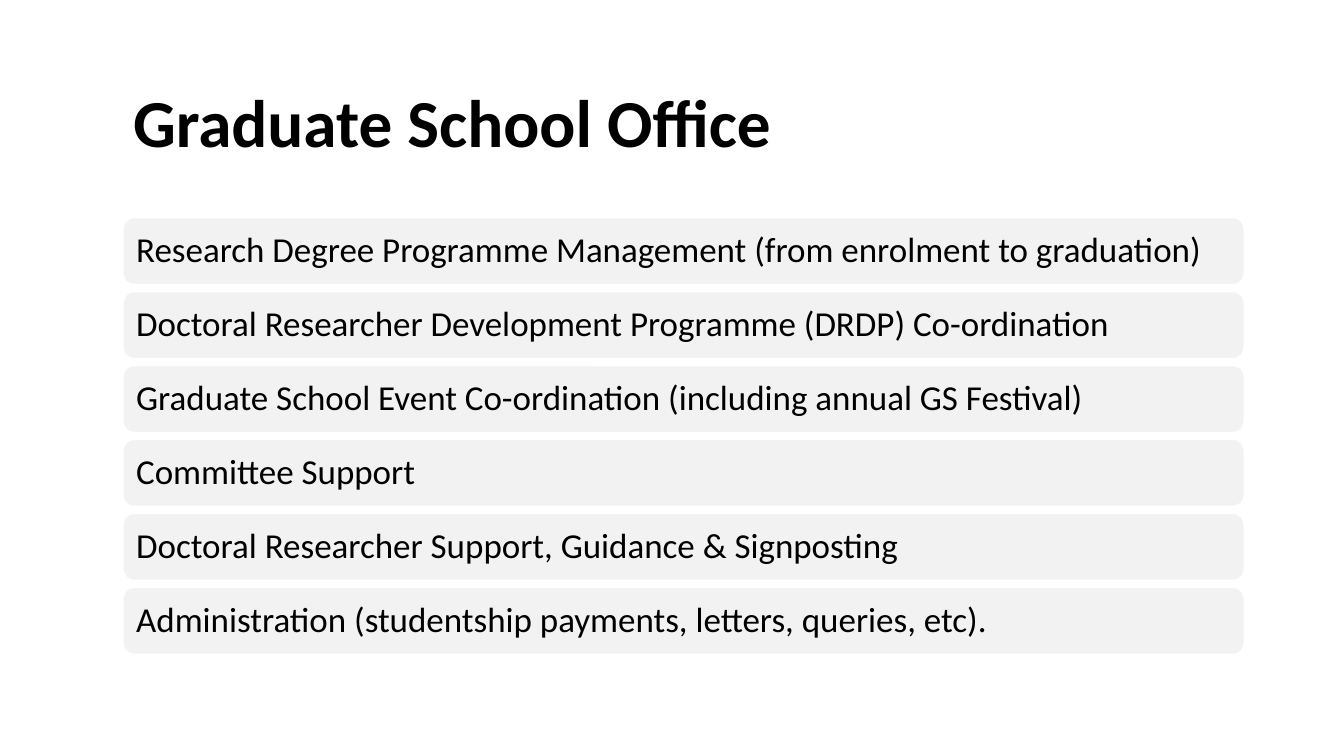
from pptx import Presentation
from pptx.dml.color import RGBColor
from pptx.enum.shapes import MSO_SHAPE
from pptx.enum.text import MSO_ANCHOR, PP_ALIGN
from pptx.util import Inches, Pt

DUTIES = [
    "Research Degree Programme Management (from enrolment to graduation)",
    "Doctoral Researcher Development Programme (DRDP) Co-ordination",
    "Graduate School Event Co-ordination (including annual GS Festival)",
    "Committee Support",
    "Doctoral Researcher Support, Guidance & Signposting",
    "Administration (studentship payments, letters, queries, etc).",
]


def color(hex_code):
    """Return the colour for a hex string."""
    return RGBColor.from_string(hex_code)


def write(frame, text, size, bold=False):
    """Write one left-aligned, vertically centred line of text."""
    frame.word_wrap = True
    frame.vertical_anchor = MSO_ANCHOR.MIDDLE
    line = frame.paragraphs[0]
    line.alignment = PP_ALIGN.LEFT
    line.line_spacing = 0.9
    run = line.add_run()
    run.text = text
    run.font.name = "Calibri"
    run.font.size = Pt(size)
    run.font.bold = bold
    run.font.color.rgb = color("000000")


def add_heading(slide, text, left, top, width, height):
    """Place and fill the title placeholder."""
    heading = slide.shapes.title
    heading.left, heading.top = Inches(left), Inches(top)
    heading.width, heading.height = Inches(width), Inches(height)
    write(heading.text_frame, text, 48, bold=True)


def add_duties(slide, duties, left, top, width, height, gap=0.07):
    """Stack one rounded bar per duty, evenly filling the box."""
    bar_height = (height - gap * (len(duties) - 1)) / len(duties)
    for row, duty in enumerate(duties):
        bar = slide.shapes.add_shape(
            MSO_SHAPE.ROUNDED_RECTANGLE,
            Inches(left), Inches(top + row * (bar_height + gap)),
            Inches(width), Inches(bar_height),
        )
        bar.shadow.inherit = False
        bar.fill.solid()
        bar.fill.fore_color.rgb = color("F2F2F2")
        bar.line.color.rgb = color("FFFFFF")
        bar.line.width = Pt(1)
        frame = bar.text_frame
        frame.margin_left = frame.margin_right = Inches(0.1)
        frame.margin_top = frame.margin_bottom = Inches(0.1)
        write(frame, duty, 25)


def main():
    """Build and save the slide."""
    deck = Presentation()
    deck.slide_width, deck.slide_height = Inches(13.33), Inches(7.5)
    slide = deck.slides.add_slide(deck.slide_layouts[5])
    add_heading(slide, "Graduate School Office", 1.22, 0.6, 11.12, 1.29)
    add_duties(slide, DUTIES, 1.22, 2.16, 11.12, 4.33)
    deck.save("out.pptx")


if __name__ == "__main__":
    main()
